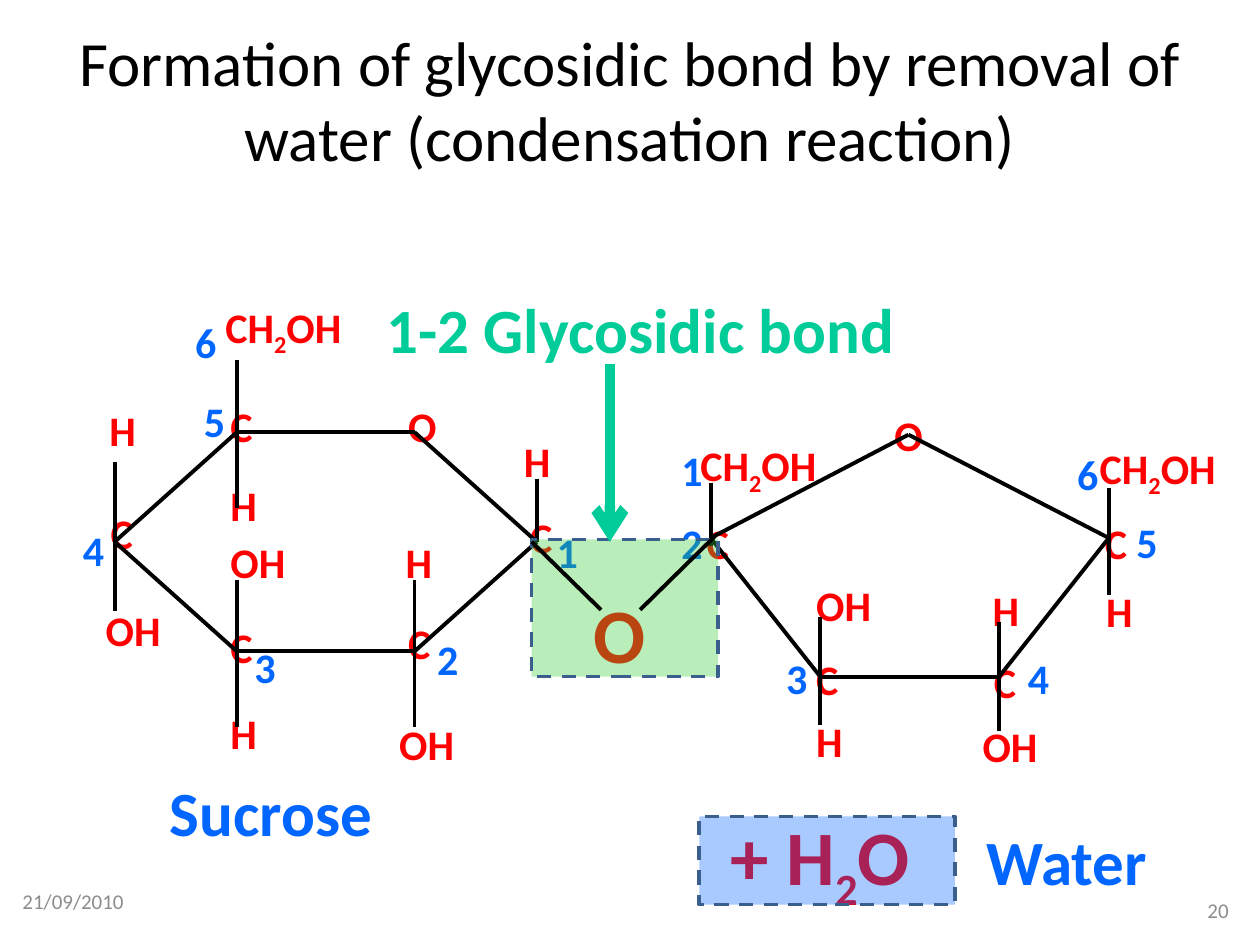
"""Build a slide showing sucrose and water formed by a condensation reaction."""
import itertools

import lxml.etree
import pptx
import pptx.dml.color
import pptx.enum.dml
import pptx.enum.shapes
import pptx.enum.text
import pptx.oxml.ns
import pptx.util

COLUMNS, ROWS = 1000, 750
ALIGN = pptx.enum.text.PP_ALIGN
ANCHOR = pptx.enum.text.MSO_ANCHOR

THEME = {
    "font": "Calibri",
    "title": {"size": 36, "color": "000000", "bold": False},
    "footer": {"size": 12, "color": "8C8C8C", "bold": False},
    "atom": {"size": 24, "color": "FF0000", "bold": True},
    "number": {"size": 24, "color": "0066FF", "bold": True},
    "product": {"size": 44, "color": "FF0000", "bold": True},
    "name": {"size": 36, "color": "0066FF", "bold": True},
    "bond name": {"size": 36, "color": "00CC99", "bold": True},
    "bond": {"color": "000000", "width": 2.25},
    "arrow": {"color": "00CC99", "width": 6},
    "outline": {"color": "3A5F8C", "width": 2},
    "bond area": "33CC33",
    "water area": "0066FF",
    "opacity": 34,
}

FRAMED = [
    ("Formation of glycosidic bond by removal of water (condensation reaction)",
     (50, 16, 900, 125), "title", ALIGN.CENTER),
    ("21/09/2010", (8, 695, 233, 40), "footer", ALIGN.LEFT),
    ("20", (930, 702, 55, 40), "footer", ALIGN.RIGHT),
]

GLUCOSE = {
    "vertices": {"C4": (91, 430), "C5": (188, 343), "O": (329, 343),
                 "C1": (426, 430), "C2": (329, 517), "C3": (188, 517)},
    "arms": {"C1": (50, 0), "C2": (57, 60), "C3": (57, 60), "C4": (63, 55), "C5": (57, 60)},
    "atoms": [("C", 411, 401), ("C", 314, 485), ("C", 78, 398), ("C", 173, 313),
              ("C", 173, 488), ("O", 314, 313), ("CH|2|OH", 169, 234),
              ("OH", 74, 475), ("OH", 307, 565), ("OH", 173, 421),
              ("H", 77, 316), ("H", 173, 376), ("H", 173, 557),
              ("H", 312, 421), ("H", 406, 341)],
    "numbers": [("1", 432, 413), ("2", 337, 498), ("3", 192, 504),
                ("4", 56, 411), ("5", 152, 309), ("6", 145, 246)],
    "widths": {"CH|2|OH": 153, "OH": 89, "H": 52},
    "letter": (45, 44),
}
FRUCTOSE = {
    "vertices": {"C2": (564, 427), "O": (721, 345), "C5": (880, 427),
                 "C4": (793, 537), "C3": (651, 537)},
    "arms": {"C2": (44, 6), "C3": (47, 38), "C4": (43, 43), "C5": (40, 45)},
    "atoms": [("C", 551, 406), ("C", 867, 406), ("C", 779, 516), ("C", 638, 514),
              ("O", 700, 320), ("CH|2|OH", 863, 346), ("CH|2|OH", 546, 344),
              ("OH", 770, 567), ("OH", 638, 455), ("H", 868, 460),
              ("H", 638, 563), ("H", 778, 459)],
    "numbers": [("1", 531, 348), ("2", 531, 406), ("3", 614, 513),
                ("4", 806, 513), ("5", 892, 405), ("6", 845, 351)],
    "widths": {"CH|2|OH": 136, "OH": 73},
    "letter": (27, 27),
}
RINGS = [GLUCOSE, FRUCTOSE]

BRIDGE_OXYGEN = ("O", (461, 461, 47, 84), "product")
BRIDGE_BONDS = [((508, 484), (568, 425)), ((422, 430), (477, 484))]
BOND_AREA = (422, 428, 148, 109)
WATER_AREA = (555, 648, 203, 70)
ARROW = ((484, 289), (484, 430))
NAMES = [("1-2 Glycosidic bond", (297, 226, 430, 71), "bond name"),
         ("Sucrose", (125, 609, 219, 71), "name"),
         ("Water", (773, 648, 148, 71), "name")]
WATER_FORMULA = ("+ H|2|O", (570, 637, 191, 84), "product")

presentation = pptx.Presentation()
presentation.slide_width = pptx.util.Inches(10)
presentation.slide_height = pptx.util.Inches(7.5)
slide = presentation.slides.add_slide(presentation.slide_layouts[6])


def place(*lengths):
    """Turn alternating column and row counts into slide lengths."""
    cells = itertools.cycle((presentation.slide_width / COLUMNS, presentation.slide_height / ROWS))
    return [round(length * cell) for length, cell in zip(lengths, cells)]


def assign(target, values):
    """Set every named value on the target."""
    for name, value in values.items():
        setattr(target, name, value)


def rgb(color):
    """Return a colour from its hexadecimal value."""
    return pptx.dml.color.RGBColor.from_string(color)


def add_text(text, box, style, align=ALIGN.LEFT, anchor=ANCHOR.TOP):
    """Add a text box; every second part between bars is a subscript."""
    frame = slide.shapes.add_textbox(*place(*box)).text_frame
    assign(frame, {"word_wrap": True, "vertical_anchor": anchor})
    paragraph = frame.paragraphs[0]
    paragraph.alignment = align
    look = THEME[style]
    for index, part in enumerate(text.split("|")):
        run = paragraph.add_run()
        run.text = part
        assign(run.font, {"name": THEME["font"], "size": pptx.util.Pt(look["size"]),
                          "bold": look["bold"]})
        run.font.color.rgb = rgb(look["color"])
        if index % 2:
            run.font._element.set("baseline", "-25000")


def format_line(line, style):
    """Give a line its theme colour and width."""
    line.color.rgb = rgb(THEME[style]["color"])
    line.width = pptx.util.Pt(THEME[style]["width"])


def add_line(start, end, style="bond"):
    """Add a straight line without shadow."""
    connector = slide.shapes.add_connector(
        pptx.enum.shapes.MSO_CONNECTOR.STRAIGHT, *place(*start, *end))
    format_line(connector.line, style)
    lxml.etree.SubElement(connector._element.spPr, pptx.oxml.ns.qn("a:effectLst"))
    return connector


def add_area(box, fill):
    """Add a dashed, see-through rectangle."""
    shape = slide.shapes.add_shape(pptx.enum.shapes.MSO_SHAPE.RECTANGLE, *place(*box))
    shape.shadow.inherit = False
    shape.fill.solid()
    shape.fill.fore_color.rgb = rgb(THEME[fill])
    color = shape._element.spPr.find(".//" + pptx.oxml.ns.qn("a:srgbClr"))
    alpha = lxml.etree.SubElement(color, pptx.oxml.ns.qn("a:alpha"))
    alpha.set("val", str(THEME["opacity"] * 1000))
    format_line(shape.line, "outline")
    shape.line.dash_style = pptx.enum.dml.MSO_LINE.DASH


def add_ring(ring):
    """Add the labels, ring bonds and vertical bonds of one sugar."""
    width, height = ring["letter"]
    for style in ("atom", "number"):
        for text, column, row in ring[style + "s"]:
            add_text(text, (column, row, ring["widths"].get(text, width), height), style)
    vertices = list(ring["vertices"].values())
    for start, end in zip(vertices, vertices[1:] + vertices[:1]):
        add_line(start, end)
    for atom, (above, below) in ring["arms"].items():
        column, row = ring["vertices"][atom]
        add_line((column, row - above), (column, row + below))


for text, box, style, align in FRAMED:
    add_text(text, box, style, align, ANCHOR.MIDDLE)
for ring in RINGS:
    add_ring(ring)
add_text(*BRIDGE_OXYGEN)
add_area(BOND_AREA, "bond area")
for start, end in BRIDGE_BONDS:
    add_line(start, end)
add_text(*WATER_FORMULA)
add_area(WATER_AREA, "water area")
for name in NAMES:
    add_text(*name)
arrow = add_line(*ARROW, "arrow")
lxml.etree.SubElement(arrow.line._ln, pptx.oxml.ns.qn("a:tailEnd")).set("type", "arrow")

presentation.save("out.pptx")
